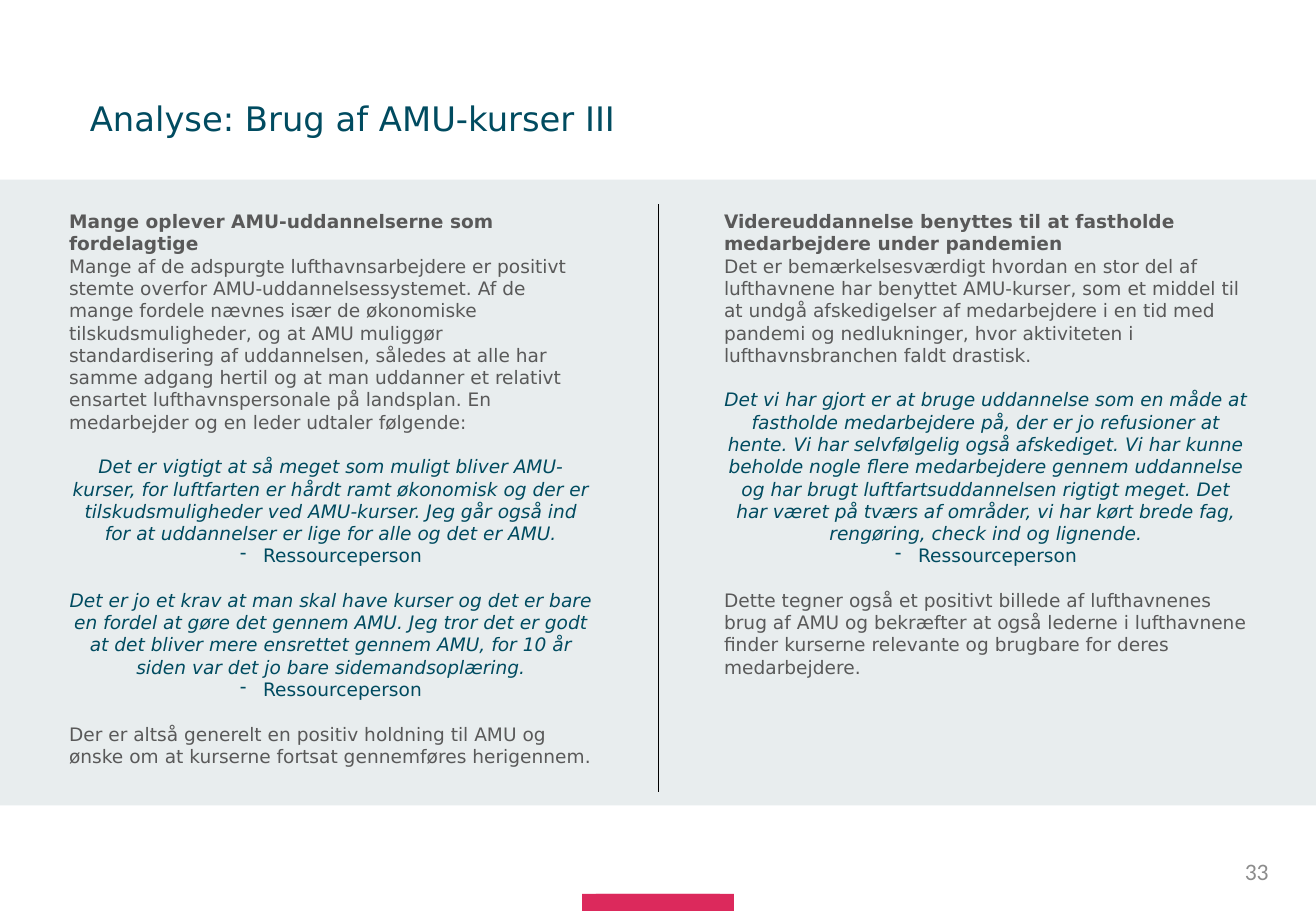
from lxml.etree import SubElement
from pptx import Presentation
from pptx.dml.color import RGBColor
from pptx.enum.shapes import MSO_CONNECTOR, MSO_SHAPE
from pptx.enum.text import MSO_ANCHOR, PP_ALIGN
from pptx.oxml.ns import qn
from pptx.util import Inches, Pt

WIDE, HIGH = Inches(10.83), Inches(7.5)
TEAL, GREY, RED = "004B60", "595959", "DC295C"
GAP = Pt(13.2)  # one line of body text
MARK = Inches(0.19)

# Format values for each kind of paragraph: (paragraph, font, colour)
BODY = dict(name="DejaVu Sans", size=Pt(11))
MID = dict(alignment=PP_ALIGN.CENTER)
STYLES = {
    "head": ({}, dict(BODY, bold=True), GREY),
    "text": ({}, BODY, GREY),
    "quote": (dict(MID, space_before=GAP), dict(BODY, italic=True), TEAL),
    "source": (MID, BODY, TEAL),
    "close": (dict(space_before=GAP), BODY, GREY),
    "title": (dict(line_spacing=0.9), dict(BODY, size=Pt(20)), TEAL),
    "page": (dict(alignment=PP_ALIGN.RIGHT),
             dict(name="Calibri", size=Pt(14)), "8C8C8C"),
}

LEFT = [
    ("head", "Mange oplever AMU-uddannelserne som fordelagtige"),
    ("text", "Mange af de adspurgte lufthavnsarbejdere er positivt stemte "
     "overfor AMU-uddannelsessystemet. Af de mange fordele nævnes især de "
     "økonomiske tilskudsmuligheder, og at AMU muliggør standardisering af "
     "uddannelsen, således at alle har samme adgang hertil og at man uddanner "
     "et relativt ensartet lufthavnspersonale på landsplan. En medarbejder og "
     "en leder udtaler følgende:"),
    ("quote", "Det er vigtigt at så meget som muligt bliver AMU-kurser, for "
     "luftfarten er hårdt ramt økonomisk og der er tilskudsmuligheder ved "
     "AMU-kurser. Jeg går også ind for at uddannelser er lige for alle og det "
     "er AMU."),
    ("source", "Ressourceperson"),
    ("quote", "Det er jo et krav at man skal have kurser og det er bare en "
     "fordel at gøre det gennem AMU. Jeg tror det er godt at det bliver mere "
     "ensrettet gennem AMU, for 10 år siden var det jo bare sidemandsoplæring."),
    ("source", "Ressourceperson"),
    ("close", "Der er altså generelt en positiv holdning til AMU og ønske om "
     "at kurserne fortsat gennemføres herigennem."),
]
RIGHT = [
    ("head", "Videreuddannelse benyttes til at fastholde medarbejdere under "
     "pandemien"),
    ("text", "Det er bemærkelsesværdigt hvordan en stor del af lufthavnene har "
     "benyttet AMU-kurser, som et middel til at undgå afskedigelser af "
     "medarbejdere i en tid med pandemi og nedlukninger, hvor aktiviteten i "
     "lufthavnsbranchen faldt drastisk."),
    ("quote", "Det vi har gjort er at bruge uddannelse som en måde at fastholde "
     "medarbejdere på, der er jo refusioner at hente. Vi har selvfølgelig også "
     "afskediget. Vi har kunne beholde nogle flere medarbejdere gennem "
     "uddannelse og har brugt luftfartsuddannelsen rigtigt meget. Det har "
     "været på tværs af områder, vi har kørt brede fag, rengøring, check ind "
     "og lignende."),
    ("source", "Ressourceperson"),
    ("close", "Dette tegner også et positivt billede af lufthavnenes brug af "
     "AMU og bekræfter at også lederne i lufthavnene finder kurserne relevante "
     "og brugbare for deres medarbejdere."),
]


def area(left, top, width, height):
    """Turn percent shares of the slide into lengths."""
    return (int(WIDE * left / 100), int(HIGH * top / 100),
            int(WIDE * width / 100), int(HIGH * height / 100))


def paint(form, color):
    form.rgb = RGBColor.from_string(color)


def apply(item, values):
    for key, value in values.items():
        setattr(item, key, value)


def add_bar(slide, share, color, alpha=None):
    bar = slide.shapes.add_shape(MSO_SHAPE.RECTANGLE, *area(*share))
    bar.shadow.inherit = False
    bar.line.fill.background()
    bar.fill.solid()
    paint(bar.fill.fore_color, color)
    if alpha is not None:
        tint = bar.fill._xPr.find(".//" + qn("a:srgbClr"))
        SubElement(tint, qn("a:alpha"), val=str(alpha * 1000))


def add_rule(slide, share, color):
    left, top, width, height = area(*share)
    rule = slide.shapes.add_connector(
        MSO_CONNECTOR.STRAIGHT, left, top, left + width, top + height)
    paint(rule.line.color, color)
    rule.line.width = Pt(0.5)
    SubElement(rule._element.spPr, qn("a:effectLst"))


def add_dash(para):
    props = para._p.get_or_add_pPr()
    props.set("marL", str(MARK))
    props.set("indent", str(-MARK))
    SubElement(props, qn("a:buChar"), char="-")


def add_text(slide, share, parts, frame):
    box = slide.shapes.add_textbox(*area(*share)).text_frame
    apply(box, dict(frame, word_wrap=True))
    for num, (kind, words) in enumerate(parts):
        para = box.add_paragraph() if num else box.paragraphs[0]
        if kind == "source":
            add_dash(para)
        layout, font, color = STYLES[kind]
        apply(para, layout)
        run = para.add_run()
        run.text = words
        apply(run.font, font)
        paint(run.font.color, color)


def main():
    deck = Presentation()
    apply(deck, dict(slide_width=WIDE, slide_height=HIGH))
    slide = deck.slides.add_slide(deck.slide_layouts[6])

    # Footer accent and pale band
    for width in (11.54, 9.42):
        add_bar(slide, (50 - width / 2, 98.13, width, 1.87), RED)
    add_bar(slide, (0, 19.73, 100, 68.67), "8DA5AD", 20)

    # Page number and title
    middle = dict(vertical_anchor=MSO_ANCHOR.MIDDLE)
    flush = dict.fromkeys(
        ("margin_left", "margin_top", "margin_right", "margin_bottom"), 0)
    add_text(slide, (74.79, 92.93, 22.53, 5.33), [("page", "33")], middle)
    add_text(slide, (6.83, 10.53, 86.24, 5.33),
             [("title", "Analyse: Brug af AMU-kurser III")], middle | flush)

    # Two columns with a rule between them
    add_rule(slide, (50, 22.4, 0, 64.53), "000000")
    for left, parts in ((4.34, LEFT), (54.11, RIGHT)):
        add_text(slide, (left, 22.4, 41.64, 66.67), parts, {})

    deck.save("out.pptx")


if __name__ == "__main__":
    main()
